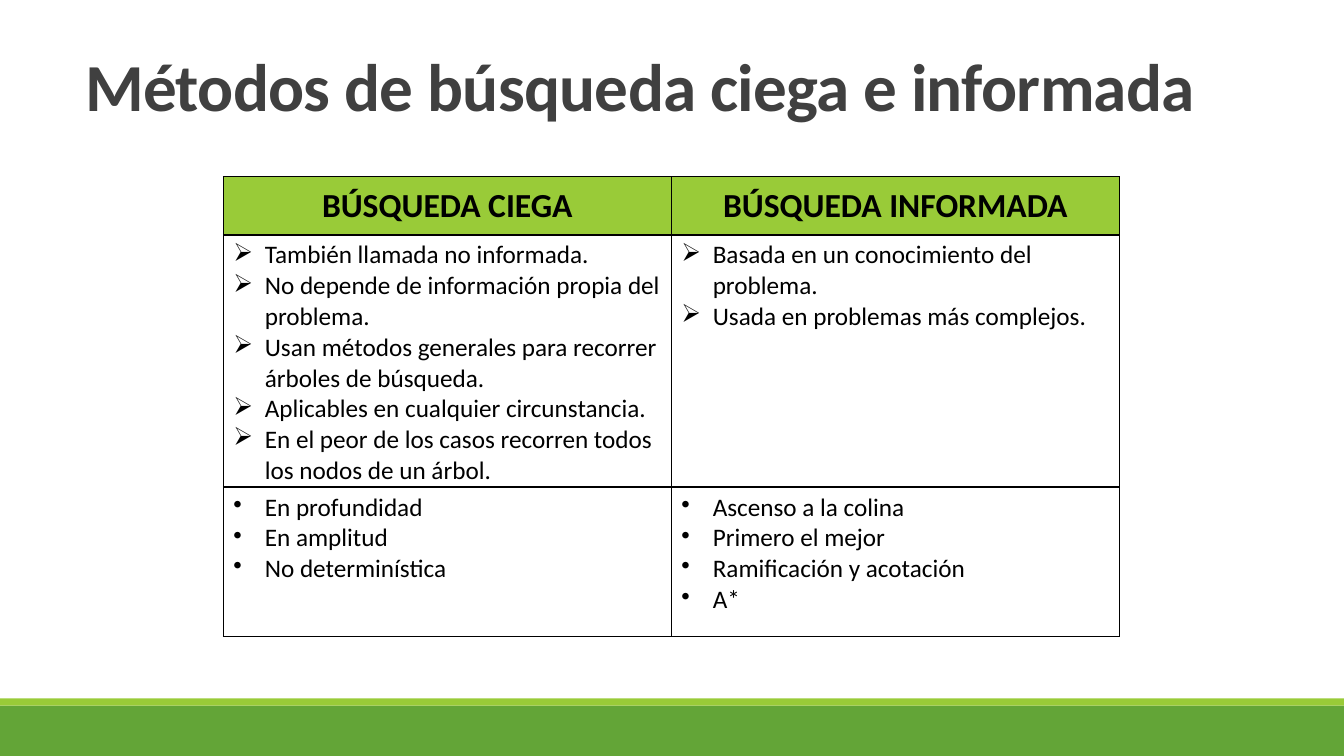
from pptx import Presentation
from pptx.dml.color import RGBColor
from pptx.enum.shapes import MSO_SHAPE
from pptx.enum.text import MSO_ANCHOR, PP_ALIGN
from pptx.oxml import parse_xml
from pptx.oxml.ns import nsdecls
from pptx.util import Cm, Pt


def tint(code):
    return RGBColor.from_string(code)


def style(para, form):
    for key, value in form.items():
        setattr(para.font, key, value)
    para.font.color.rgb = tint("404040" if form is TITLE else "000000")


TITLE = {"name": "Calibri", "size": Pt(48), "bold": True}
HEAD = {"name": "Calibri", "size": Pt(24), "bold": True}
BODY = {"name": "Calibri", "size": Pt(18), "bold": False}

deck = Presentation()
deck.slide_width, deck.slide_height = Cm(33.87), Cm(19.05)
slide = deck.slides.add_slide(deck.slide_layouts[6])

# Footer bands
for top, high, code in [(17.78, 1.27, "63A537"), (17.6, 0.18, "99CB38")]:
    band = slide.shapes.add_shape(
        MSO_SHAPE.RECTANGLE, 0, Cm(top), deck.slide_width, Cm(high))
    band.shadow.inherit = False
    band.fill.solid()
    band.fill.fore_color.rgb = tint(code)
    band.line.fill.background()

# Title
box = slide.shapes.add_textbox(Cm(1.9), Cm(1.3), Cm(30.02), Cm(3.63))
box.text_frame.word_wrap = True
para = box.text_frame.paragraphs[0]
para.alignment = PP_ALIGN.JUSTIFY
para.line_spacing = 0.85
run = para.add_run()
run.text = "Métodos de búsqueda ciega e informada"
style(para, TITLE)
run._r.get_or_add_rPr().set("spc", "-50")

# Table: height, bullet and the lines of both cells, row by row
rows = [
    (1.47, None, ["BÚSQUEDA CIEGA"], ["BÚSQUEDA INFORMADA"]),
    (6.02, "➢",
     ["También llamada no informada.",
      "No depende de información propia del problema.",
      "Usan métodos generales para recorrer árboles de búsqueda.",
      "Aplicables en cualquier circunstancia.",
      "En el peor de los casos recorren todos los nodos de un árbol."],
     ["Basada en un conocimiento del problema.",
      "Usada en problemas más complejos."]),
    (3.76, "•",
     ["En profundidad", "En amplitud", "No determinística"],
     ["Ascenso a la colina", "Primero el mejor",
      "Ramificación y acotación", "A*"]),
]
high = sum(row[0] for row in rows)
table = slide.shapes.add_table(
    len(rows), 2, Cm(5.63), Cm(4.45), Cm(22.58), Cm(high)).table
table.horz_banding = False

for r, (high, mark, *texts) in enumerate(rows):
    table.rows[r].height = Cm(high)
    for c, lines in enumerate(texts):
        cell = table.cell(r, c)
        cell.vertical_anchor = MSO_ANCHOR.TOP if mark else MSO_ANCHOR.MIDDLE

        # Borders, then fill
        props = cell._tc.get_or_add_tcPr()
        for side in ("lnL", "lnR", "lnT", "lnB"):
            props.append(parse_xml(
                f'<a:{side} {nsdecls("a")} w="12700"><a:solidFill>'
                f'<a:srgbClr val="000000"/></a:solidFill></a:{side}>'))
        cell.fill.solid()
        cell.fill.fore_color.rgb = tint("FFFFFF" if mark else "99CB38")

        # Text with hanging bullets
        cell.text_frame.text = "\n".join(lines)
        for para in cell.text_frame.paragraphs:
            if mark:
                item = para._p.get_or_add_pPr()
                item.set("marL", str(Cm(0.79)))
                item.set("indent", str(-Cm(0.79)))
                item.append(parse_xml(
                    f'<a:buChar {nsdecls("a")} char="{mark}"/>'))
            else:
                para.alignment = PP_ALIGN.CENTER
            style(para, BODY if mark else HEAD)

deck.save("out.pptx")
